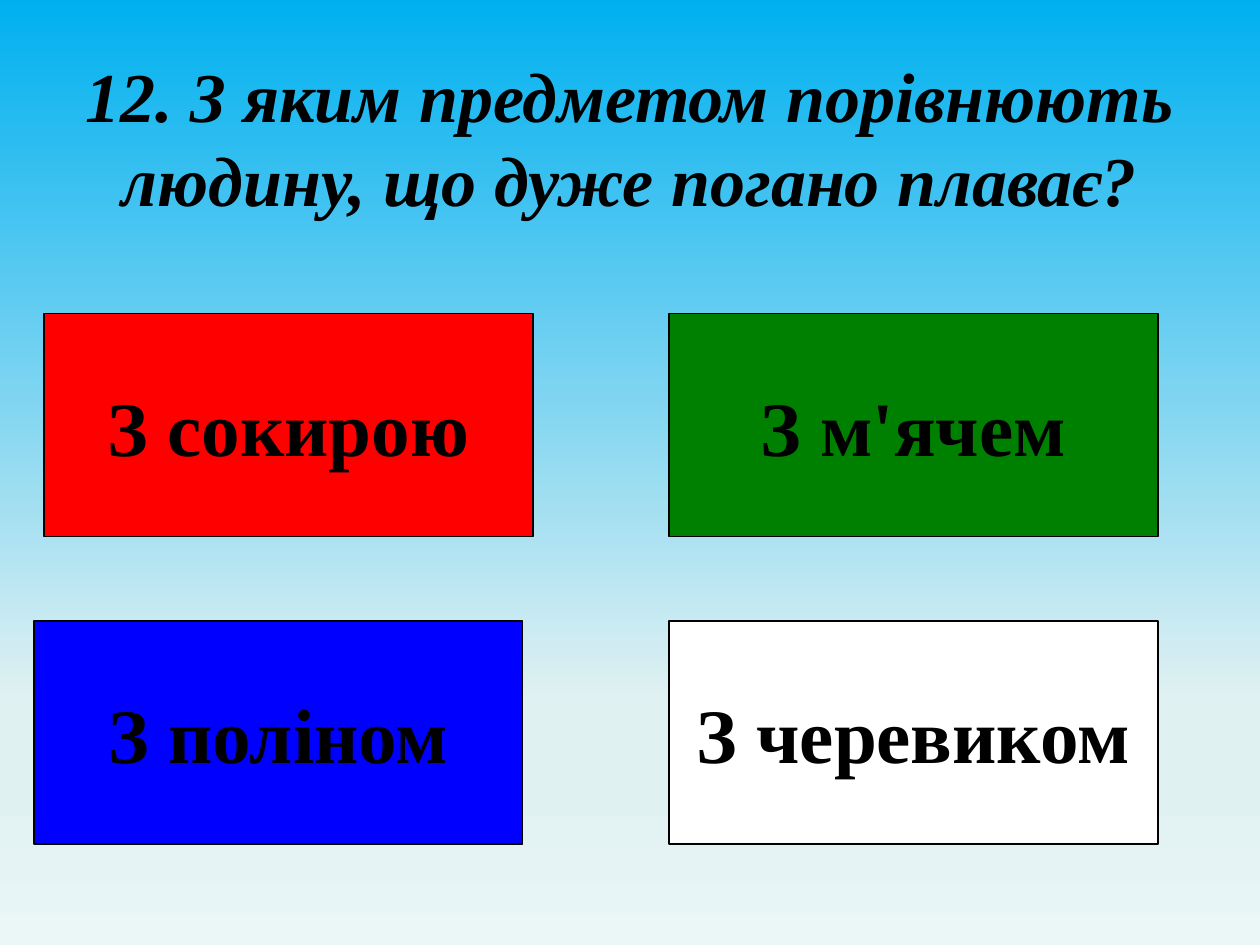
from pptx import Presentation
from pptx.dml.color import RGBColor
from pptx.enum.shapes import MSO_SHAPE
from pptx.enum.text import MSO_ANCHOR, PP_ALIGN
from pptx.oxml.ns import qn
from pptx.util import Inches, Pt
from lxml import etree

RECTANGLE = MSO_SHAPE.RECTANGLE
MIDDLE = MSO_ANCHOR.MIDDLE
CENTER = PP_ALIGN.CENTER
TITLE_ONLY = 5

FONT = "Times New Roman"
BLACK = "000000"
QUESTION = "12. З яким предметом порівнюють людину, що дуже погано плаває?"
SKY = [(0, "00B0F0"), (74, "E0F1F2"), (83, "E0F1F2"), (100, "EBF6F7")]
ANSWER_ROWS = [
    (2.49, [("З сокирою", "FF0000", 0.35), ("З м'ячем", "008000", 5.31)]),
    (4.93, [("З поліном", "0000FF", 0.27), ("З черевиком", "FFFFFF", 5.31)]),
]
ANSWER_WIDTH, ANSWER_HEIGHT = 3.88, 1.77


def color(value):
    return RGBColor.from_string(value)


def write(box, text, size, italic=False):
    frame = box.text_frame
    frame.text = text
    frame.vertical_anchor = MIDDLE
    para = frame.paragraphs[0]
    para.alignment = CENTER
    font = para.runs[0].font
    font.name = FONT
    font.size = Pt(size)
    font.bold = True
    font.italic = italic
    font.color.rgb = color(BLACK)


def paint_background(page, stops):
    fill = page.background.fill
    fill.gradient()
    fill.gradient_angle = 270
    stop_list = page.element.find(".//" + qn("a:gsLst"))
    for stop in list(stop_list):
        stop_list.remove(stop)
    for percent, value in stops:
        stop = etree.SubElement(stop_list, qn("a:gs"), pos=str(percent * 1000))
        etree.SubElement(stop, qn("a:srgbClr"), val=value)


def add_answer(page, text, fill, left, top):
    box = page.shapes.add_shape(
        RECTANGLE, Inches(left), Inches(top), Inches(ANSWER_WIDTH), Inches(ANSWER_HEIGHT)
    )
    box.shadow.inherit = False
    box.fill.solid()
    box.fill.fore_color.rgb = color(fill)
    box.line.color.rgb = color(BLACK)
    box.line.width = Pt(0.75)
    write(box, text, 44)
    box.text_frame.word_wrap = False


def main():
    deck = Presentation()
    deck.slide_width, deck.slide_height = Inches(10), Inches(7.5)
    page = deck.slides.add_slide(deck.slide_layouts[TITLE_ONLY])
    paint_background(page, SKY)

    title = page.shapes.title
    title.left, title.top = Inches(0.5), Inches(0.3)
    title.width, title.height = Inches(8.99), Inches(1.56)
    write(title, QUESTION, 40, italic=True)

    for top, answers in ANSWER_ROWS:
        for text, fill, left in answers:
            add_answer(page, text, fill, left, top)

    deck.save("out.pptx")


if __name__ == "__main__":
    main()
